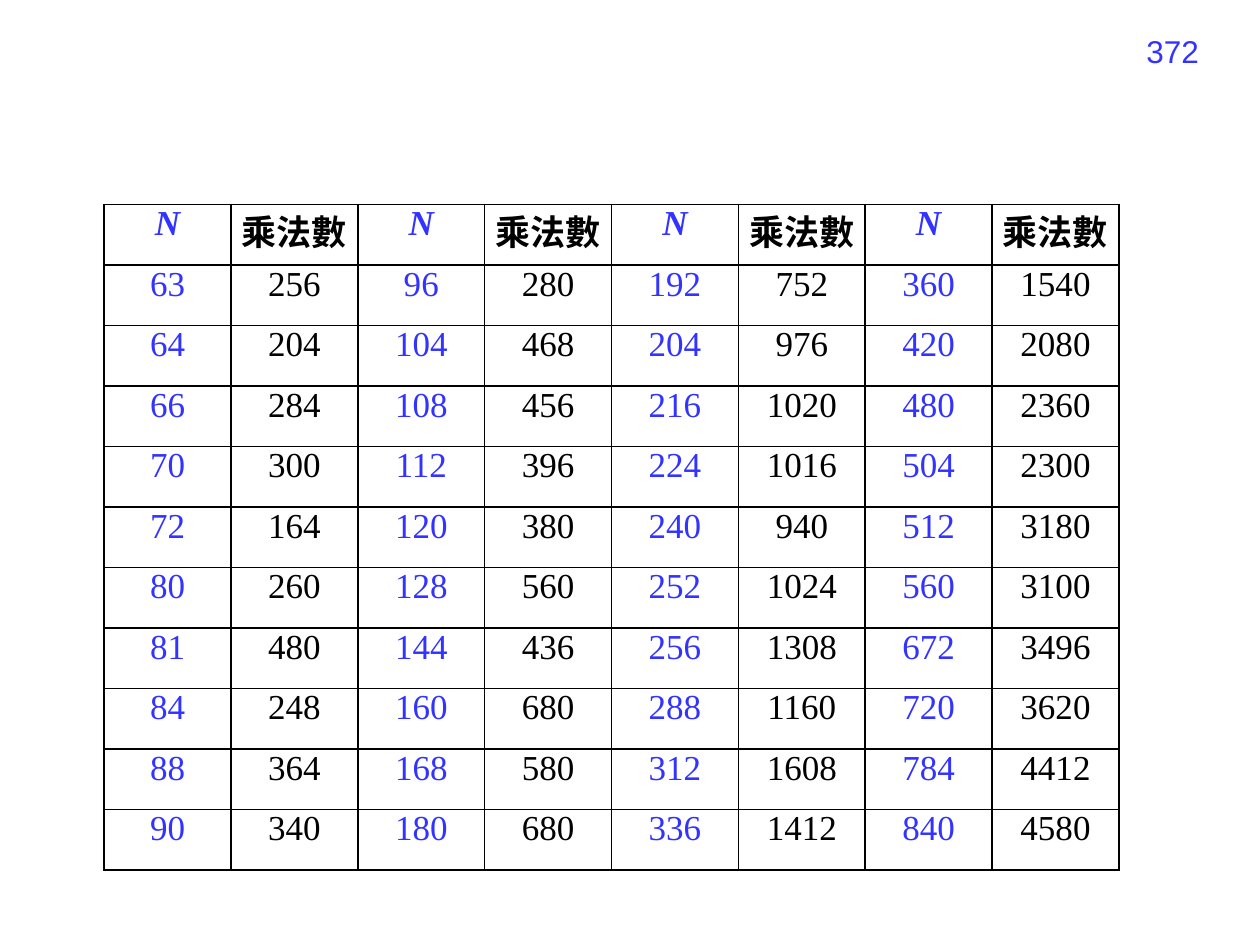
from lxml import etree
from pptx import Presentation
from pptx.dml.color import RGBColor
from pptx.enum import text
from pptx.oxml import ns
from pptx.util import Cm, Pt

BLUE = RGBColor(0x33, 0x33, 0xFF)
BLACK = RGBColor(0, 0, 0)

# Content: four (N, multiplications) pairs side by side in each row
PAGE_NUMBER = "372"
HEADINGS = ("N", "乘法數") * 4
COUNTS = [
    (63, 256, 96, 280, 192, 752, 360, 1540),
    (64, 204, 104, 468, 204, 976, 420, 2080),
    (66, 284, 108, 456, 216, 1020, 480, 2360),
    (70, 300, 112, 396, 224, 1016, 504, 2300),
    (72, 164, 120, 380, 240, 940, 512, 3180),
    (80, 260, 128, 560, 252, 1024, 560, 3100),
    (81, 480, 144, 436, 256, 1308, 672, 3496),
    (84, 248, 160, 680, 288, 1160, 720, 3620),
    (88, 364, 168, 580, 312, 1608, 784, 4412),
    (90, 340, 180, 680, 336, 1412, 840, 4580),
]
TABLE_WIDTH, ROW_HEIGHT = Cm(20.46), Cm(1.22)
COLUMN_WIDTH = TABLE_WIDTH // len(HEADINGS)


def format_paragraph(paragraph, font_name, size, color, alignment):
    paragraph.alignment = alignment
    paragraph.font.name = font_name
    paragraph.font.size = Pt(size)
    paragraph.font.color.rgb = color
    # Digits keep equal widths without pair kerning
    paragraph._p.get_or_add_pPr().get_or_add_defRPr().set("kern", "0")


def add_borders(cell, color, width):
    properties = cell._tc.get_or_add_tcPr()
    for side in ("a:lnL", "a:lnR", "a:lnT", "a:lnB"):
        line = etree.SubElement(properties, ns.qn(side), w=str(width))
        fill = etree.SubElement(line, ns.qn("a:solidFill"))
        etree.SubElement(fill, ns.qn("a:srgbClr"), val=str(color))


def main():
    prs = Presentation()
    prs.slide_width, prs.slide_height = Cm(25.4), Cm(19.05)
    slide = prs.slides.add_slide(prs.slide_layouts[6])

    # Page number
    page_number = slide.shapes.add_textbox(Cm(18.5), Cm(0.53), Cm(5.92), Cm(1.32))
    page_number.text_frame.word_wrap = True
    page_number.text_frame.text = PAGE_NUMBER
    format_paragraph(page_number.text_frame.paragraphs[0], "Arial", 18, BLUE,
                     text.PP_ALIGN.RIGHT)

    # Table of multiplication counts
    rows = [HEADINGS, *COUNTS]
    counts = slide.shapes.add_table(
        len(rows), len(HEADINGS), Cm(2.1), Cm(4.12),
        TABLE_WIDTH, ROW_HEIGHT * len(rows)).table
    counts.horz_banding = False
    for column in counts.columns:
        column.width = COLUMN_WIDTH
    for r, values in enumerate(rows):
        counts.rows[r].height = ROW_HEIGHT
        for c, value in enumerate(values):
            is_n = c % 2 == 0
            cell = counts.cell(r, c)
            cell.margin_left = cell.margin_right = Cm(0.13)
            cell.margin_top = cell.margin_bottom = 0
            add_borders(cell, BLACK, Pt(1))
            cell.fill.background()
            cell.text = str(value)
            paragraph = cell.text_frame.paragraphs[0]
            format_paragraph(paragraph, "Times New Roman", 20,
                             BLUE if is_n else BLACK, text.PP_ALIGN.CENTER)
            paragraph.font.bold = r == 0
            paragraph.font.italic = r == 0 and is_n

    prs.save("out.pptx")


if __name__ == "__main__":
    main()
